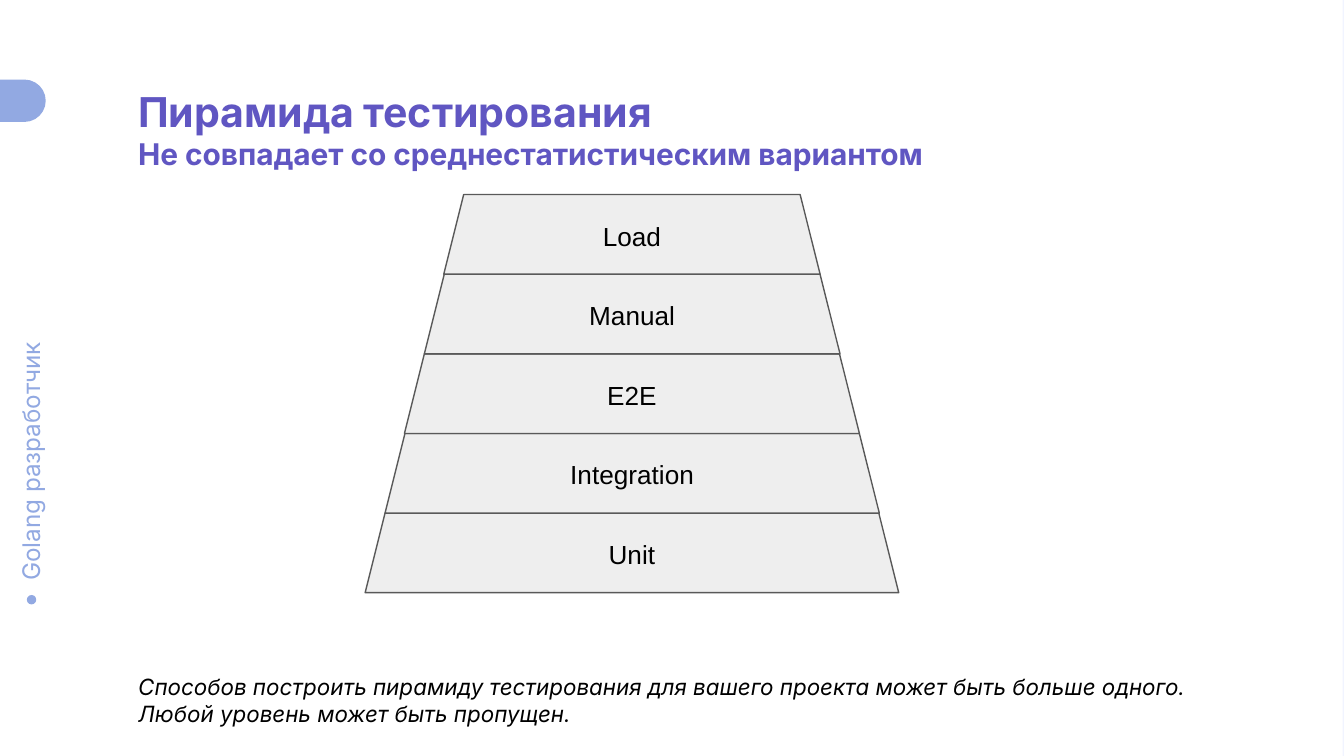
from dataclasses import dataclass

from pptx import Presentation
from pptx import util as u
from pptx.dml.color import RGBColor
from pptx.enum import shapes, text

PX = 2286  # EMU per px, 400 px to the inch


@dataclass(frozen=True)
class Theme:
    backdrop: str = "F1F4FF"
    panel: str = "FFFFFF"
    accent: str = "92A9E2"
    heading: str = "6056C2"
    level: str = "EEEEEE"
    outline: str = "595959"
    body: str = "000000"
    font: str = "Inter"
    level_font: str = "Arial"
    title_size: int = 22
    subtitle_size: int = 16
    level_size: int = 14
    course_size: int = 13
    note_size: int = 12


THEME = Theme()
LEVELS = ["Load", "Manual", "E2E", "Integration", "Unit"]


def px(*lengths):
    return [u.Emu(length * PX) for length in lengths]


def add_figure(page, kind, place, fill, line=None):
    """Add a flat preset shape."""
    figure = page.shapes.add_shape(kind, *px(*place))
    figure.shadow.inherit = False
    figure.fill.solid()
    figure.fill.fore_color.rgb = RGBColor.from_string(fill)
    if line:
        figure.line.color.rgb = RGBColor.from_string(line)
        figure.line.width = u.Pt(0.75)
    else:
        figure.line.fill.background()
    return figure


def write(box, lines, color, font=THEME.font, bold=False, italic=False,
          align=text.PP_ALIGN.LEFT, anchor=text.MSO_ANCHOR.TOP, inset_y=40):
    """Fill a frame with one paragraph for each (wording, size) pair."""
    frame = box.text_frame
    frame.word_wrap = True
    frame.vertical_anchor = anchor
    frame.margin_left, frame.margin_right = px(40, 40)
    frame.margin_top, frame.margin_bottom = px(inset_y, inset_y)
    for index, (wording, size) in enumerate(lines):
        para = frame.add_paragraph() if index else frame.paragraphs[0]
        para.alignment = align
        span = para.add_run()
        span.text = wording
        span.font.name = font
        span.font.size = u.Pt(size)
        span.font.bold = bold
        span.font.italic = italic
        span.font.color.rgb = RGBColor.from_string(color)


def add_text(page, place, lines, color, **style):
    box = page.shapes.add_textbox(*px(*place))
    write(box, lines, color, **style)
    return box


def add_pyramid(page, center, top, top_width, height, growth):
    """Stack the levels from the widest at the bottom to the top."""
    for index, label in reversed(list(enumerate(LEVELS))):
        width = top_width + index * growth
        place = (center - width // 2, top + index * height, width, height)
        level = add_figure(page, shapes.MSO_SHAPE.TRAPEZOID, place,
                           THEME.level, THEME.outline)
        level.adjustments[0] = 0.25
        write(level, [(label, THEME.level_size)], THEME.body,
              font=THEME.level_font, align=text.PP_ALIGN.CENTER,
              anchor=text.MSO_ANCHOR.MIDDLE)


def main():
    deck = Presentation()
    deck.slide_width, deck.slide_height = px(4000, 2250)
    page = deck.slides.add_slide(deck.slide_layouts[6])

    # Background and white panel
    page.background.fill.solid()
    page.background.fill.fore_color.rgb = RGBColor.from_string(THEME.backdrop)
    add_figure(page, shapes.MSO_SHAPE.RECTANGLE, (-4, 0, 4000, 2250), THEME.panel)

    # Side strip: course name, dot and tab
    course = add_text(page, (-308, 1284, 800, 168),
                      [("Golang разработчик", THEME.course_size)], THEME.accent)
    course.rotation = 270
    add_figure(page, shapes.MSO_SHAPE.OVAL, (80, 1771, 28, 28), THEME.accent)
    tab = add_figure(page, shapes.MSO_SHAPE.ROUNDED_RECTANGLE,
                     (-152, 237, 288, 126), THEME.accent)
    tab.adjustments[0] = 0.5

    # Heading
    add_text(page, (372, 237, 2448, 188),
             [("Пирамида тестирования", THEME.title_size),
              ("Не совпадает со среднестатистическим вариантом", THEME.subtitle_size)],
             THEME.heading, bold=True, inset_y=20)

    # Testing pyramid
    add_pyramid(page, center=1881, top=579, top_width=1120, height=237, growth=117)

    # Closing note
    add_text(page, (372, 1964, 3276, 244),
             [("Способов построить пирамиду тестирования для вашего проекта "
               "может быть больше одного.", THEME.note_size),
              ("Любой уровень может быть пропущен.", THEME.note_size)],
             THEME.body, italic=True)

    deck.save("out.pptx")


if __name__ == "__main__":
    main()
